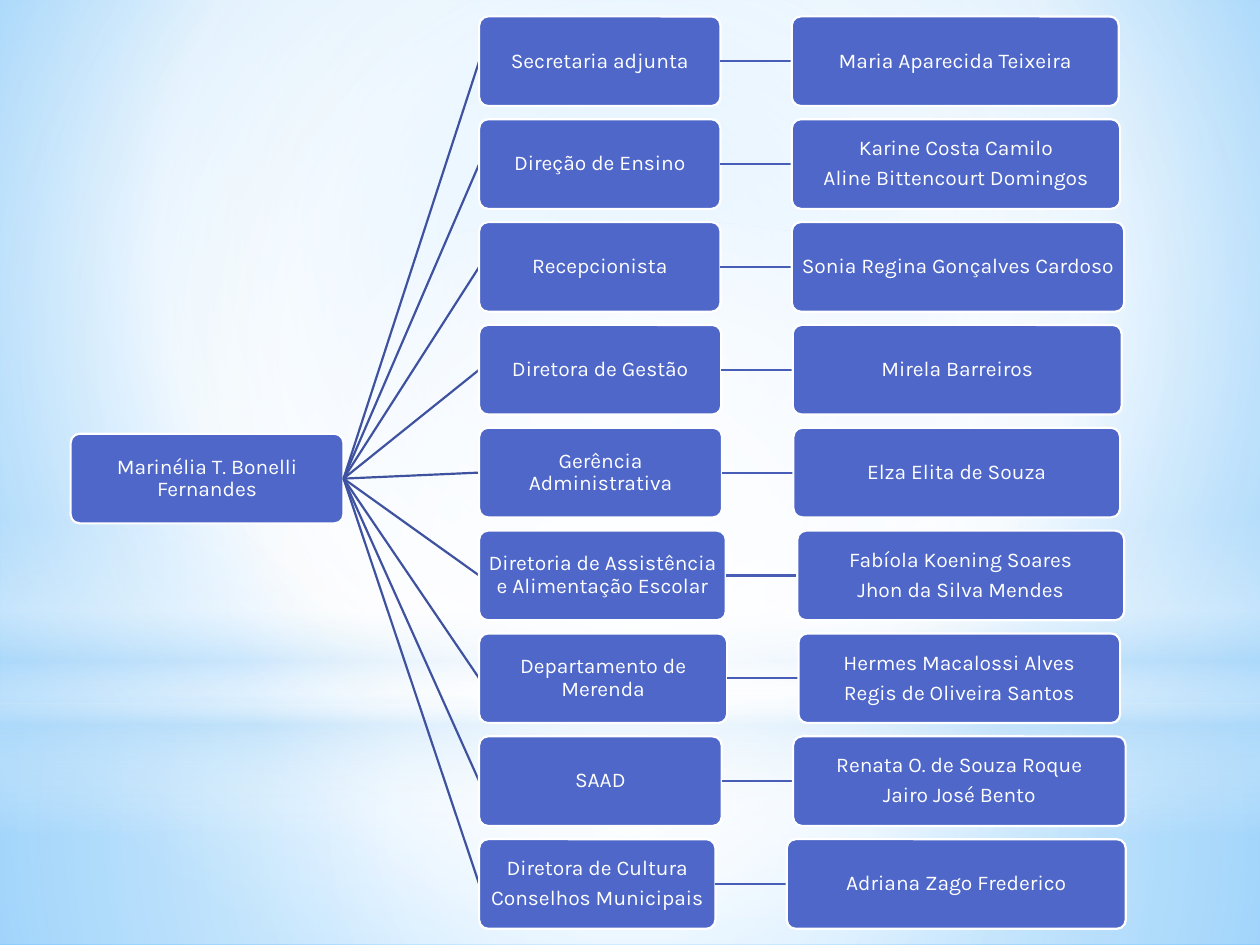
from lxml.etree import SubElement
from pptx import Presentation
from pptx.dml.color import RGBColor
from pptx.enum.shapes import MSO_CONNECTOR as Link, MSO_SHAPE as Preset
from pptx.enum.text import MSO_ANCHOR as Anchor, PP_ALIGN as Align
from pptx.oxml.ns import qn
from pptx.util import Pt

SLIDE_W, SLIDE_H = 720, 540
WHITE, BOX_BLUE, FAN_BLUE, LINK_BLUE = "FFFFFF", "4E67C8", "3E52A0", "475DB6"
BOX_H, ROW_STEP, FIRST_TOP = 51.2, 58.77, 9.4
ROLE_LEFT, LINK_W = 273.8, 40.8
LEADER = "Marinélia T. Bonelli Fernandes"
LEADER_BOX = (40.4, 247.9, 155.9, BOX_H)

# role lines, role width, people, people width
ROWS = [
    (["Secretaria adjunta"], 137.9, ["Maria Aparecida Teixeira"], 186.8),
    (["Direção de Ensino"], 137.9, ["Karine Costa Camilo", "Aline Bittencourt Domingos"], 187.6),
    (["Recepcionista"], 137.9, ["Sonia Regina Gonçalves Cardoso"], 189.9),
    (["Diretora de Gestão"], 138.4, ["Mirela Barreiros"], 188.0),
    (["Gerência Administrativa"], 138.8, ["Elza Elita de Souza"], 186.7),
    (["Diretoria de Assistência e Alimentação Escolar"], 141.0,
     ["Fabíola Koening Soares", "Jhon da Silva Mendes"], 186.8),
    (["Departamento de Merenda"], 141.7,
     ["Hermes Macalossi Alves", "Regis de Oliveira Santos"], 183.8),
    (["SAAD"], 138.6, ["Renata O. de Souza Roque", "Jairo José Bento"], 190.0),
    (["Diretora de Cultura", "Conselhos Municipais"], 135.0, ["Adriana Zago Frederico"], 193.7),
]

CENTRE = (50, 50, 50, 50)
# preset, box, stops (position, colour, opacity), focus of a circular gradient
GLOWS = [
    (Preset.RECTANGLE, (0, 402, SLIDE_W, 138),
     [(0, WHITE, 91), (37, WHITE, 76), (100, "B4DCFA", 79)], CENTRE),
    (Preset.RECTANGLE, (0, 0, SLIDE_W, 402),
     [(0, WHITE, 89), (48, WHITE, 62), (100, "B4DCFA", 79)], CENTRE),
    (Preset.RECTANGLE, (0, 296.6, SLIDE_W, 180),
     [(0, WHITE, 0), (29, WHITE, 30), (45, "B4DCFA", 40), (55, WHITE, 26),
      (65, "B4DCFA", 60), (100, WHITE, 0)], None),
    (Preset.OVAL, (0, 126, SLIDE_W, 402), [(0, WHITE, 100), (56, WHITE, 0)], CENTRE),
]


def rgb(colour):
    return RGBColor.from_string(colour)


def set_gradient(fill, owner, stops, focus=None):
    """Fill owner with a circular gradient around focus, or a vertical one without focus."""
    fill.gradient()
    gradient = owner.find(".//" + qn("a:gradFill"))
    for child in list(gradient):
        gradient.remove(child)
    stop_list = SubElement(gradient, qn("a:gsLst"))
    for position, colour, opacity in stops:
        stop = SubElement(stop_list, qn("a:gs"), pos=str(position * 1000))
        tint = SubElement(stop, qn("a:srgbClr"), val=colour)
        if opacity < 100:
            SubElement(tint, qn("a:alpha"), val=str(opacity * 1000))
    if focus:
        circle = SubElement(gradient, qn("a:path"), path="circle")
        edges = {edge: str(inset * 1000) for edge, inset in zip("ltrb", focus)}
        SubElement(circle, qn("a:fillToRect"), **edges)
    else:
        SubElement(gradient, qn("a:lin"), ang="5400000", scaled="0")


def add_preset(slide, preset, box):
    shape = slide.shapes.add_shape(preset, *map(Pt, box))
    shape.shadow.inherit = False
    return shape


def write_text(frame, lines, size=12, font="Karla", colour=WHITE, margin=2.2):
    frame.word_wrap = True
    frame.vertical_anchor = Anchor.MIDDLE
    frame.margin_left = frame.margin_right = Pt(margin)
    frame.margin_top = frame.margin_bottom = Pt(margin)
    for index, line in enumerate(lines):
        paragraph = frame.paragraphs[0] if index == 0 else frame.add_paragraph()
        paragraph.alignment = Align.CENTER
        paragraph.line_spacing = 0.9
        paragraph.space_after = Pt(0.35 * size)
        run = paragraph.add_run()
        run.text = line
        run.font.size, run.font.name = Pt(size), font
        run.font.color.rgb = rgb(colour)


def add_node(slide, box, lines):
    node = add_preset(slide, Preset.ROUNDED_RECTANGLE, box)
    node.adjustments[0] = 0.1
    node.fill.solid()
    node.fill.fore_color.rgb = rgb(BOX_BLUE)
    node.line.color.rgb = rgb(WHITE)
    node.line.width = Pt(1.25)
    write_text(node.text_frame, lines)


def add_link(slide, start, end, colour):
    link = slide.shapes.add_connector(Link.STRAIGHT, *map(Pt, start + end))
    link.line.color.rgb = rgb(colour)
    link.line.width = Pt(1.25)
    SubElement(link._element.spPr, qn("a:effectLst"))


def add_backdrop(slide):
    set_gradient(slide.background.fill, slide._element,
                 [(0, "9ED5FF", 100), (60, WHITE, 100), (100, "5BB9FF", 100)],
                 (20, 10, 20, 60))
    for preset, box, stops, focus in GLOWS:
        glow = add_preset(slide, preset, box)
        set_gradient(glow.fill, glow._element, stops, focus)
        glow.line.fill.background()


def add_row(slide, left, top, row, hub):
    """Place a role and its people, joined to each other and to the hub point."""
    role, role_width, people, people_width = row
    middle = top + BOX_H / 2
    role_right = left + role_width
    people_left = role_right + LINK_W
    add_link(slide, hub, (left, middle), FAN_BLUE)
    add_node(slide, (left, top, role_width, BOX_H), role)
    add_link(slide, (role_right, middle), (people_left, middle), LINK_BLUE)
    add_node(slide, (people_left, top, people_width, BOX_H), people)


def add_org_chart(slide, leader_box):
    left, top, width, height = leader_box
    hub = (left + width, top + height / 2)
    add_node(slide, leader_box, [LEADER])
    for index, row in enumerate(ROWS):
        add_row(slide, ROLE_LEFT, FIRST_TOP + index * ROW_STEP, row, hub)


def main():
    deck = Presentation()
    deck.slide_width, deck.slide_height = Pt(SLIDE_W), Pt(SLIDE_H)
    slide = deck.slides.add_slide(deck.slide_layouts[6])
    add_backdrop(slide)
    add_org_chart(slide, LEADER_BOX)
    deck.save("out.pptx")


if __name__ == "__main__":
    main()
